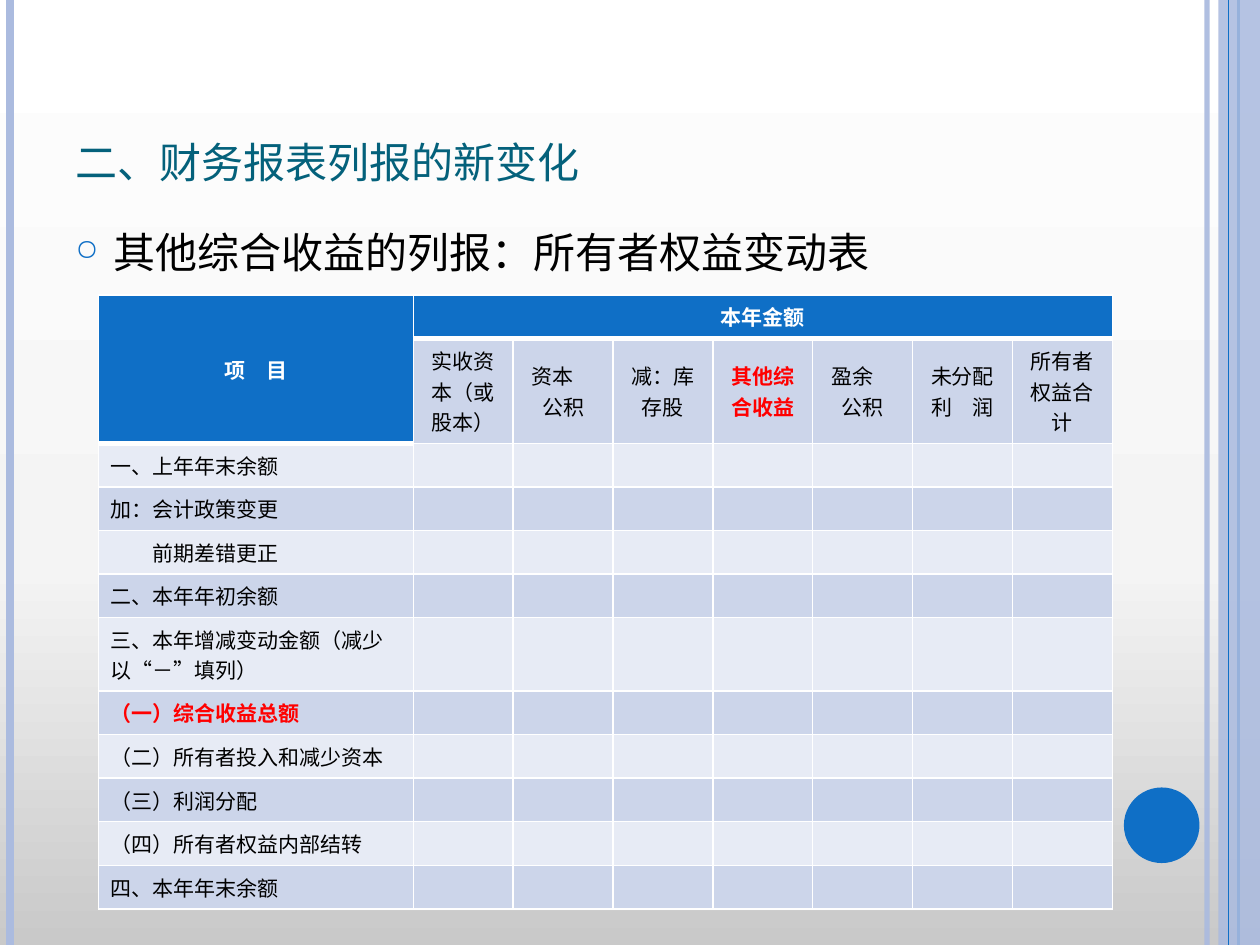
from copy import deepcopy

from lxml.etree import SubElement
from pptx import Presentation
from pptx.dml.color import RGBColor
from pptx.enum.shapes import MSO_CONNECTOR, MSO_SHAPE
from pptx.enum.text import MSO_ANCHOR, PP_ALIGN
from pptx.oxml.ns import qn
from pptx.util import Inches, Pt

WIDTH, HEIGHT = 10, 7.5
FONT = "Karla"
BLUE, PALE_BLUE, TEAL = "0F6FC6", "ABBBDF", "04617B"
BLACK, WHITE, RED = "000000", "FFFFFF", "FF0000"
BANDS = ("CCD5EA", "E7EBF5")
BACKGROUND_STOPS = ((0, "C9C9C9"), (0.4, "F4F4F4"), (1, "FFFFFF"))

# Vertical rules: x, colour, points, opacity in percent
LEFT_RULES = [(9.58, PALE_BLUE, 3, 93), (0.08, PALE_BLUE, 4.5, 100), (9.83, BLUE, 1.5, 100)]
BAND_RULE = (9.75, BLUE, 0.75, 100)

COLUMN_HEADS = ["实收资本（或股本）", "资本　公积", "减：库存股", "其他综合收益",
                "盈余　公积", "未分配利　润", "所有者权益合计"]
ROW_HEADS = ["一、上年年末余额", "加：会计政策变更", "　　前期差错更正", "二、本年年初余额",
             "三、本年增减变动金额（减少以“－”填列）", "（一）综合收益总额",
             "（二）所有者投入和减少资本", "（三）利润分配", "（四）所有者权益内部结转",
             "四、本年年末余额"]
HIGHLIGHTS = {"其他综合收益", "（一）综合收益总额"}
TABLE_WIDTH, HEAD_WIDTH = 8.05, 2.5
AMOUNT_WIDTH = (TABLE_WIDTH - HEAD_WIDTH) / len(COLUMN_HEADS)
COLUMN_WIDTHS = [HEAD_WIDTH] + [AMOUNT_WIDTH] * len(COLUMN_HEADS)

# Row heights in points, for one, two and three lines of text
ONE_LINE, TWO_LINES, THREE_LINES = 24.9, 42, 60
ROW_HEIGHTS = [ONE_LINE, THREE_LINES]
ROW_HEIGHTS += [TWO_LINES if len(head) > 15 else ONE_LINE for head in ROW_HEADS]


def color(hex_string):
    return RGBColor.from_string(hex_string)


def set_opacity(fill_parent, percent):
    choice = next(fill_parent.iter(qn("a:srgbClr")))
    SubElement(choice, qn("a:alpha"), val=str(percent * 1000))


def add_run(paragraph, text, size, hex_string, bold=False):
    run = paragraph.add_run()
    run.text = text
    run.font.name = FONT
    run.font.size = Pt(size)
    run.font.bold = bold
    run.font.color.rgb = color(hex_string)
    return run


def add_text_box(slide, box, anchor):
    frame = slide.shapes.add_textbox(*map(Inches, box)).text_frame
    frame.word_wrap = True
    frame.vertical_anchor = anchor
    return frame.paragraphs[0]


def paint_background(slide):
    fill = slide.background.fill
    fill.gradient()
    fill.gradient_angle = 90
    stop_list = next(slide.background._cSld.iter(qn("a:gsLst")))
    stop_list.append(deepcopy(stop_list[0]))
    for stop, (position, hex_string) in zip(fill.gradient_stops, BACKGROUND_STOPS):
        stop.position = position
        stop.color.rgb = color(hex_string)


def add_rule(slide, x, hex_string, points, opacity):
    rule = slide.shapes.add_connector(
        MSO_CONNECTOR.STRAIGHT, Inches(x), 0, Inches(x), Inches(HEIGHT))
    rule.line.color.rgb = color(hex_string)
    rule.line.width = Pt(points)
    properties = rule._element.spPr
    if opacity < 100:
        set_opacity(properties, opacity)
    SubElement(properties, qn("a:effectLst"))


def add_solid(slide, kind, box, hex_string):
    shape = slide.shapes.add_shape(kind, *map(Inches, box))
    shape.shadow.inherit = False
    shape.fill.solid()
    shape.fill.fore_color.rgb = color(hex_string)
    shape.line.fill.background()
    return shape


def add_decoration(slide):
    for rule in LEFT_RULES:
        add_rule(slide, *rule)
    band = add_solid(slide, MSO_SHAPE.RECTANGLE, (9.67, 0, 0.33, HEIGHT), PALE_BLUE)
    set_opacity(band._element.spPr, 87)
    add_rule(slide, *BAND_RULE)
    add_solid(slide, MSO_SHAPE.OVAL, (8.92, 6.25, 0.6, 0.6), BLUE)


def add_title(slide, box):
    paragraph = add_text_box(slide, box, MSO_ANCHOR.BOTTOM)
    run = add_run(paragraph, "二、财务报表列报的新变化", 30, TEAL)
    run.font._element.set("cap", "small")


def add_body(slide, box):
    paragraph = add_text_box(slide, box, MSO_ANCHOR.TOP)
    paragraph.space_before = Pt(6)
    properties = paragraph._p.get_or_add_pPr()
    properties.set("marL", str(Inches(0.3)))
    properties.set("indent", str(Inches(-0.3)))
    bullet_color = SubElement(properties, qn("a:buClr"))
    SubElement(bullet_color, qn("a:srgbClr"), val=BLUE)
    SubElement(properties, qn("a:buSzPct"), val="70000")
    SubElement(properties, qn("a:buChar"), char="○")
    add_run(paragraph, "其他综合收益的列报：所有者权益变动表", 24, BLACK)


def set_borders(cell, top, bottom):
    properties = cell._tc.get_or_add_tcPr()
    for side, points in (("L", 1), ("R", 1), ("T", top), ("B", bottom)):
        line = SubElement(properties, qn(f"a:ln{side}"), w=str(Pt(points)))
        SubElement(SubElement(line, qn("a:solidFill")), qn("a:srgbClr"), val=WHITE)


def style_cell(cell, row, column, text):
    # The heavy edge runs below the blue header cells
    header_rows = 2 if column == 0 else 1
    is_header = row < header_rows
    set_borders(cell, 3 if row == header_rows else 1, 3 if row + 1 == header_rows else 1)
    cell.fill.solid()
    cell.fill.fore_color.rgb = color(BLUE if is_header else BANDS[(row + 1) % 2])
    cell.vertical_anchor = MSO_ANCHOR.MIDDLE
    paragraph = cell.text_frame.paragraphs[0]
    if not text:
        SubElement(paragraph._p, qn("a:endParaRPr"), sz="1200")
        return
    if row < 2:
        paragraph.alignment = PP_ALIGN.CENTER
    highlighted = text in HIGHLIGHTS
    text_color = WHITE if is_header else RED if highlighted else BLACK
    add_run(paragraph, text, 12, text_color, is_header or highlighted)


def add_equity_table(slide, left, top):
    blanks = [""] * len(COLUMN_HEADS)
    grid = [["项　目", "本年金额"] + blanks[1:], [""] + COLUMN_HEADS]
    grid += [[head] + blanks for head in ROW_HEADS]
    table = slide.shapes.add_table(
        len(ROW_HEIGHTS), len(COLUMN_WIDTHS), Inches(left), Inches(top),
        Inches(TABLE_WIDTH), Pt(sum(ROW_HEIGHTS))).table
    table.first_row = table.horz_banding = False
    for column, width in zip(table.columns, COLUMN_WIDTHS):
        column.width = Inches(width)
    for row, height in zip(table.rows, ROW_HEIGHTS):
        row.height = Pt(height)
    for row, texts in enumerate(grid):
        for column, text in enumerate(texts):
            style_cell(table.cell(row, column), row, column, text)
    table.cell(0, 0).merge(table.cell(1, 0))
    table.cell(0, 1).merge(table.cell(0, len(COLUMN_HEADS)))


def main():
    presentation = Presentation()
    presentation.slide_width = Inches(WIDTH)
    presentation.slide_height = Inches(HEIGHT)
    slide = presentation.slides.add_slide(presentation.slide_layouts[6])
    paint_background(slide)
    add_decoration(slide)
    add_title(slide, (0.5, 0.3, 8.17, 1.25))
    add_body(slide, (0.5, 1.75, 8.56, 1.45))
    add_equity_table(slide, 0.78, 2.34)
    presentation.save("out.pptx")


if __name__ == "__main__":
    main()
